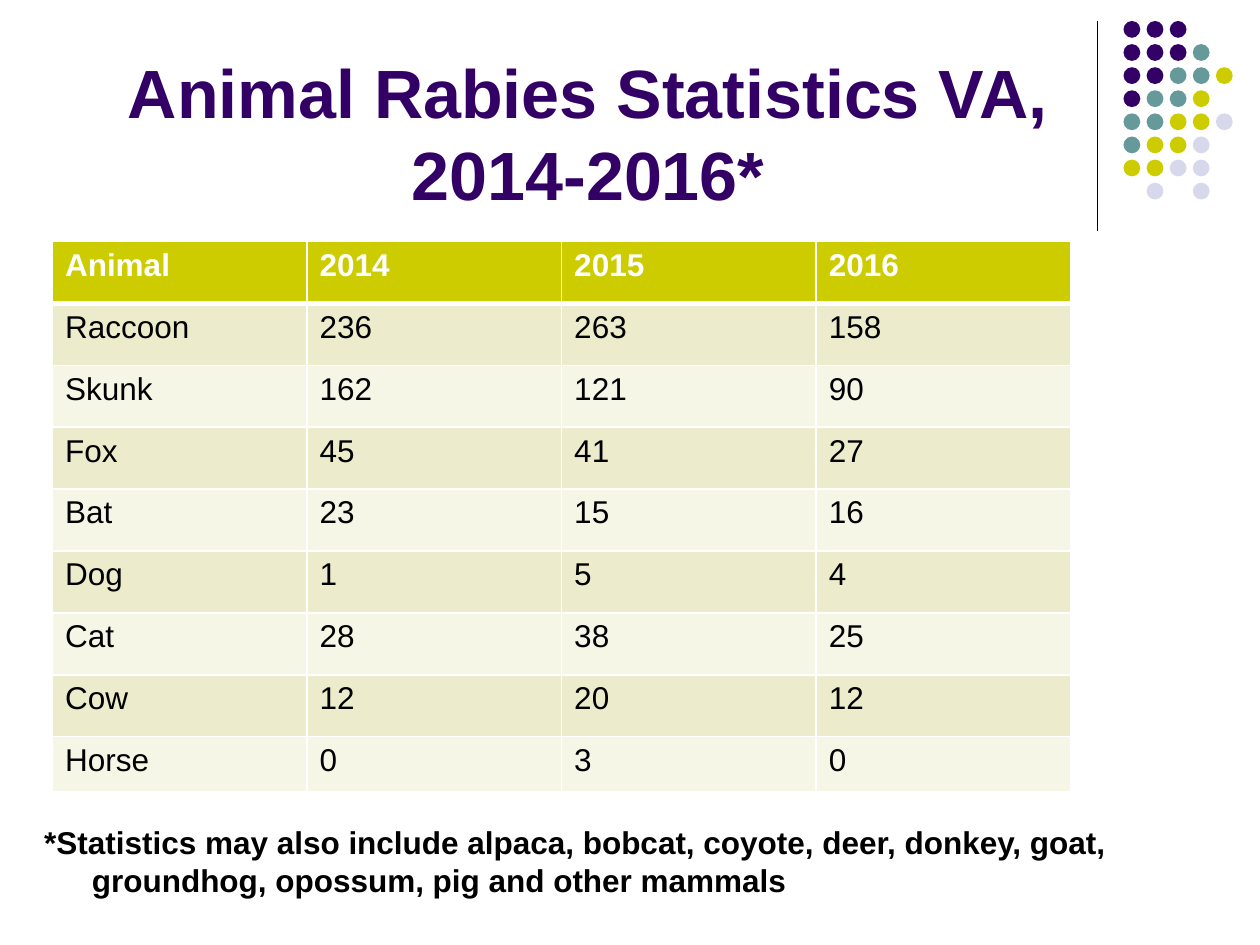
from dataclasses import dataclass

from lxml import etree
from pptx import Presentation
from pptx import util as u
from pptx.dml.color import RGBColor
from pptx.enum import shapes, text
from pptx.oxml import parse_xml
from pptx.oxml.ns import nsdecls, qn


@dataclass(frozen=True)
class Theme:
    font: str = "Arial"
    ink: str = "000000"
    paper: str = "FFFFFF"
    plum: str = "330066"
    teal: str = "669999"
    lime: str = "CCCC00"
    mist: str = "D8D8EC"
    bands: tuple = ("ECECCC", "F6F6E7")
    head: int = 39
    lead: float = 46.9
    body: int = 18
    pitch: float = 21.7


T = Theme()
COLS, ROWS = 120, 90
UNIT = u.Inches(10) / COLS

STATS = [
    ("Animal", "2014", "2015", "2016"),
    ("Raccoon", "236", "263", "158"),
    ("Skunk", "162", "121", "90"),
    ("Fox", "45", "41", "27"),
    ("Bat", "23", "15", "16"),
    ("Dog", "1", "5", "4"),
    ("Cat", "28", "38", "25"),
    ("Cow", "12", "20", "12"),
    ("Horse", "0", "3", "0"),
]
DOTS = ["PPP", "PPPT", "PPTTL", "PTTL", "TTLLM", "TLLM", "LLMM", " M M"]
HUES = {"P": T.plum, "T": T.teal, "L": T.lime, "M": T.mist}


def grid(n):
    return u.Emu(round(n * UNIT))


def rgb(hue):
    return RGBColor.from_string(hue)


def style(para, size, hue, bold):
    for run in para.runs:
        font = run.font
        font.name, font.size, font.bold = T.font, u.Pt(size), bold
        font.color.rgb = rgb(hue)


def fill_in(holder, box, words, size, hue, pitch):
    holder.left, holder.top, holder.width, holder.height = map(grid, box)
    frame = holder.text_frame
    frame.text = words
    frame.word_wrap = True
    frame.auto_size = text.MSO_AUTO_SIZE.NONE
    para = frame.paragraphs[0]
    para.line_spacing = u.Pt(pitch)
    para.space_before = u.Pt(0)
    style(para, size, hue, True)
    return frame, para


def add_title(slide, box):
    frame, para = fill_in(slide.shapes.title, box,
                          "Animal Rabies Statistics VA, 2014-2016*",
                          T.head, T.plum, T.lead)
    frame.vertical_anchor = text.MSO_ANCHOR.BOTTOM
    para.alignment = text.PP_ALIGN.CENTER


def add_note(slide, box):
    frame, para = fill_in(
        slide.placeholders[1], box,
        "*Statistics may also include alpaca, bobcat, coyote, deer, donkey, "
        "goat, groundhog, opossum, pig and other mammals",
        T.body, T.ink, T.pitch)
    frame.vertical_anchor = text.MSO_ANCHOR.TOP
    frame.margin_top = grid(6.4)
    props = para._p.get_or_add_pPr()
    hang = u.Inches(0.38)
    props.set("marL", str(hang))
    props.set("indent", str(-hang))
    etree.SubElement(props, qn("a:buNone"))


def edge(cell, side, width):
    cell._tc.get_or_add_tcPr().append(parse_xml(
        f'<a:ln{side} {nsdecls("a")} w="{u.Pt(width)}"><a:solidFill>'
        f'<a:srgbClr val="{T.paper}"/></a:solidFill></a:ln{side}>'))


def add_stats(slide, box, last):
    left, top, width, height = box
    count = len(STATS)
    table = slide.shapes.add_table(count, len(STATS[0]), *map(grid, box)).table
    step = (height - last) / (count - 1)
    for col in table.columns:
        col.width = grid(width / len(STATS[0]))
    for r, row in enumerate(STATS):
        table.rows[r].height = grid(step if r < count - 1 else last)
        head = r == 0
        for c, value in enumerate(row):
            cell = table.cell(r, c)
            cell.text = value
            style(cell.text_frame.paragraphs[0], T.body,
                  T.paper if head else T.ink, head)
            widths = {"L": 1, "R": 1, "T": 3 if r == 1 else 1, "B": 3 if head else 1}
            for side, line in widths.items():
                edge(cell, side, line)
            cell.fill.solid()
            cell.fill.fore_color.rgb = rgb(T.lime if head else T.bands[(r - 1) % 2])


def add_rule(slide, x, top, end):
    rule = slide.shapes.add_connector(
        shapes.MSO_CONNECTOR.STRAIGHT, grid(x), grid(top), grid(x), grid(end))
    rule.line.color.rgb = rgb(T.ink)
    rule.line.width = u.Pt(0.75)
    etree.SubElement(rule._element.spPr, qn("a:effectLst"))


def add_dots(slide, left, top, step, size):
    group = slide.shapes.add_group_shape()
    for r, row in enumerate(DOTS):
        for c, key in enumerate(row):
            if key not in HUES:
                continue
            dot = group.shapes.add_shape(
                shapes.MSO_SHAPE.OVAL, grid(left + c * step),
                grid(top + r * step), grid(size), grid(size))
            dot.shadow.inherit = False
            dot.fill.solid()
            dot.fill.fore_color.rgb = rgb(HUES[key])
            dot.line.fill.background()


def main():
    deck = Presentation()
    deck.slide_width, deck.slide_height = grid(COLS), grid(ROWS)
    slide = deck.slides.add_slide(deck.slide_layouts[1])
    add_rule(slide, 104.5, 2, 22)
    add_dots(slide, 107, 2, 2.2, 1.6)
    add_title(slide, (3, 3, 106, 18))
    add_note(slide, (3, 72, 114, 14))
    add_stats(slide, (5, 23, 97, 52.4), 5.2)
    deck.save("out.pptx")


if __name__ == "__main__":
    main()
